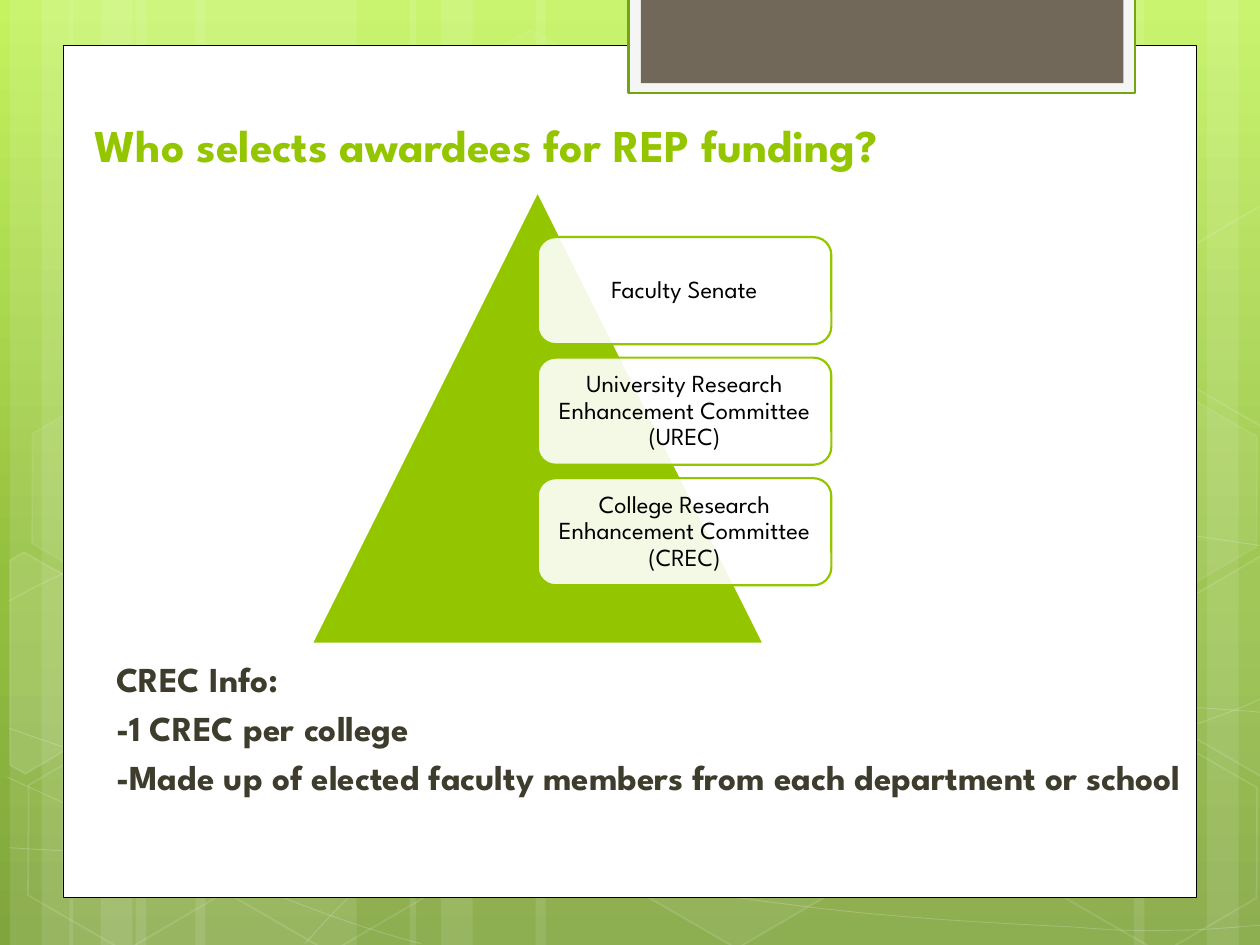
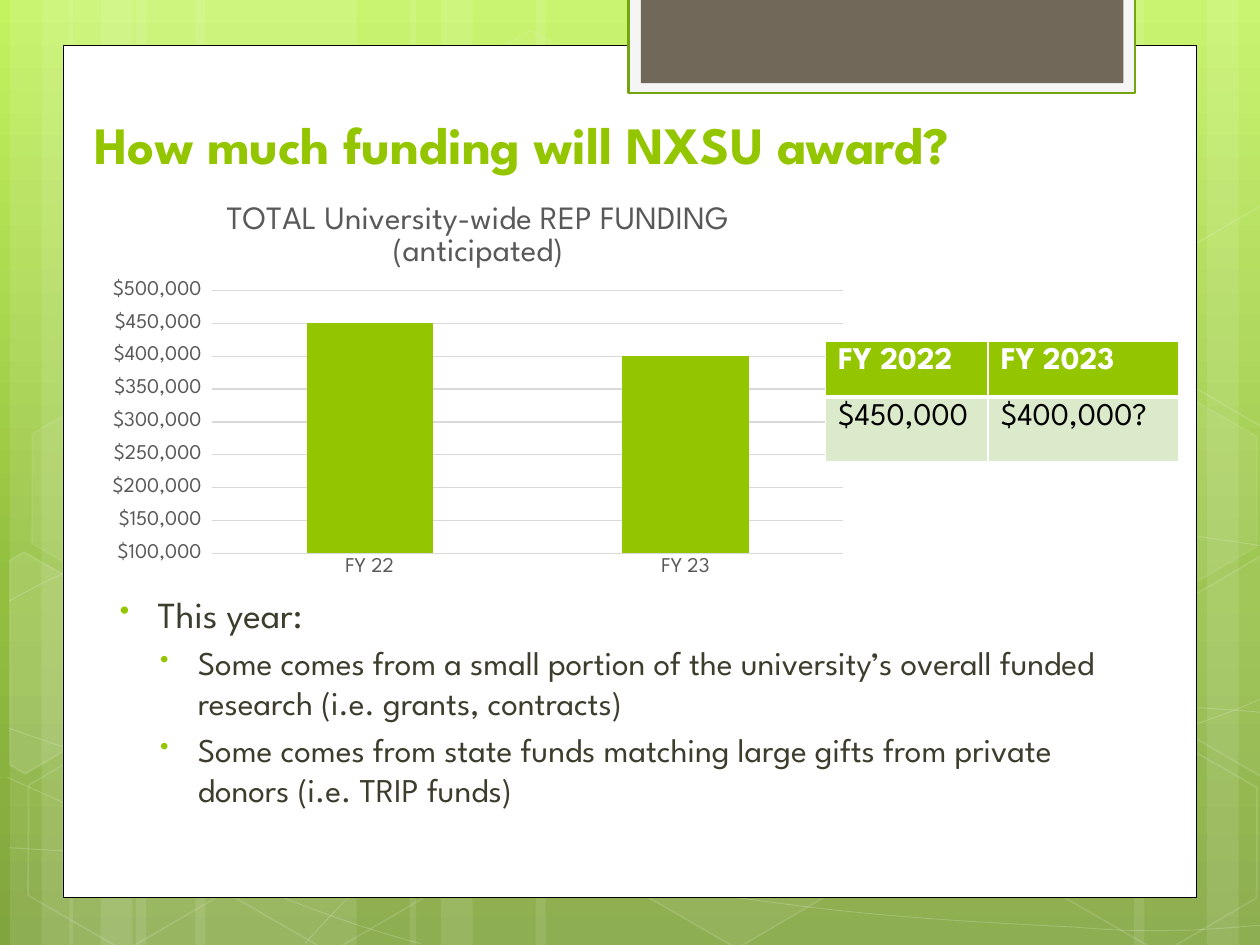
from copy import deepcopy

from lxml import etree
from pptx import Presentation
from pptx.chart.data import CategoryChartData
from pptx.dml.color import RGBColor
from pptx.enum.chart import XL_CHART_TYPE, XL_TICK_MARK
from pptx.enum.shapes import MSO_SHAPE
from pptx.enum.text import MSO_ANCHOR, MSO_AUTO_SIZE, PP_ALIGN
from pptx.oxml.ns import qn
from pptx.util import Cm, Pt

RECT = MSO_SHAPE.RECTANGLE
ROUNDED = MSO_SHAPE.ROUNDED_RECTANGLE
HEXAGON = MSO_SHAPE.HEXAGON
TRIANGLE = MSO_SHAPE.ISOSCELES_TRIANGLE
STACKED_COLUMNS = XL_CHART_TYPE.COLUMN_STACKED
NO_TICKS = XL_TICK_MARK.NONE
LEFT, CENTER = PP_ALIGN.LEFT, PP_ALIGN.CENTER
MIDDLE, BOTTOM = MSO_ANCHOR.MIDDLE, MSO_ANCHOR.BOTTOM
NO_AUTOFIT = MSO_AUTO_SIZE.NONE

FONT = "League Spartan"
GREEN = RGBColor(0x94, 0xC6, 0x00)
DARK_GREEN = RGBColor(0x74, 0xA5, 0x10)
PALE_GREEN = RGBColor(0xDC, 0xEA, 0xCC)
BROWN = RGBColor(0x71, 0x68, 0x5A)
INK = RGBColor(0x3E, 0x3D, 0x2D)
GREY = RGBColor(0x59, 0x59, 0x59)
GRID = RGBColor(0xD9, 0xD9, 0xD9)
OFF_WHITE = RGBColor(0xF5, 0xF5, 0xF5)
WHITE = RGBColor(0xFF, 0xFF, 0xFF)
BLACK = RGBColor(0x00, 0x00, 0x00)
SKY = [(0, RGBColor(0xC3, 0xF3, 0x5F)), (0.62, RGBColor(0x93, 0xBF, 0x3F)),
       (1, RGBColor(0x81, 0xA5, 0x3E))]

# Backdrop geometry in centimetres
STRIPES = [(2.74, 4.45), (0.2, 1.27), (0.84, 2.11), (3.94, 4.45), (1.4, 1.27), (2.03, 2.11),
           (18.62, 4.45), (24.33, 1.27), (22.86, 2.11), (10.8, 7.82), (8.26, 1.27), (8.89, 2.11)]
# Each wave: its start, then cubic segments (two control points and an end)
WAVES = [
    [(0.18, 17.09), (1.55, 17.17, 2.92, 17.25, 4.83, 17.22),
     (6.73, 17.2, 9.09, 17.15, 11.63, 16.89), (14.17, 16.64, 17.78, 16.15, 20.12, 15.67),
     (22.43, 15.19, 24.82, 14.43, 25.58, 14)],
    [(0.18, 12.12), (0.91, 11.71, 1.65, 11.33, 3.07, 10.95),
     (4.52, 10.57, 6.58, 10.01, 8.81, 9.83), (11.07, 9.65, 13.82, 9.63, 16.61, 9.83),
     (19.41, 10.03, 24.05, 10.82, 25.58, 11.02)],
    [(0.15, 15.67), (3.23, 17.07, 6.27, 18.47, 8.48, 19.02)],
    [(0.18, 14.68), (0.97, 14.96, 1.78, 15.24, 3.25, 15.65),
     (4.72, 16.03, 6.93, 16.66, 9.07, 17.09), (11.18, 17.53, 13.84, 17.98, 15.95, 18.24),
     (18.06, 18.52, 20.32, 18.62, 21.67, 18.69), (22.99, 18.8, 23.34, 18.75, 24, 18.75),
     (24.66, 18.72, 25.12, 18.67, 25.58, 18.64)],
    [(6.15, 19.02), (6.6, 18.52, 7.06, 18.01, 7.67, 17.55),
     (8.28, 17.09, 9.14, 16.59, 9.86, 16.23), (10.57, 15.88, 11, 15.72, 11.94, 15.47),
     (12.85, 15.21, 14.55, 14.86, 15.44, 14.68), (16.36, 14.5, 16.48, 14.5, 17.27, 14.45),
     (18.06, 14.38, 19.3, 14.3, 20.17, 14.27), (21.06, 14.25, 22.5, 14.27, 22.5, 14.27),
     (22.5, 14.27, 24.21, 14.27, 24.21, 14.27), (24.66, 14.3, 25.1, 14.33, 25.32, 14.35),
     (25.55, 14.38, 25.48, 14.35, 25.55, 14.38)],
]
# left, top, fill opacity, line opacity
HEXAGONS = [(8.48, 0.91, 4, 8), (12.62, 14.96, 6, 12), (0.28, 15.01, 0, 12),
            (0.36, 7.92, 7, 8), (4.42, 15.04, 0, 12), (19.13, 11.51, 10, 12),
            (21.18, 15.06, 0, 12), (21.18, 7.98, 7, 8)]
# fill opacity and corners of the hexagons cut off by the slide edge
CUT_HEXAGONS = [
    (10, [(0.2, 11.3), (0.48, 11.13), (2.44, 12.24), (2.41, 14.48), (0.51, 15.6), (0.2, 15.42)]),
    (4, [(23.52, 12.32), (25.43, 11.2), (25.63, 11.33), (25.63, 15.57), (25.45, 15.67),
         (23.52, 14.55)]),
    (0, [(23.52, 5.26), (25.43, 4.14), (25.65, 4.27), (25.63, 8.51), (25.45, 8.61),
         (23.52, 7.49)]),
]


def add_xml(parent, tag, **attributes):
    return etree.SubElement(parent, qn(tag), attributes)


def set_opacity(fill_parent, percent):
    if percent < 100:
        color = fill_parent.find(qn("a:solidFill"))[0]
        add_xml(color, "a:alpha", val=str(percent * 1000))


class Deck:
    def __init__(self):
        self.prs = Presentation()
        self.prs.slide_width, self.prs.slide_height = Cm(25.4), Cm(19.05)
        self.layout = self.prs.slide_layouts[5]
        self.slide = None

    # Shared look
    def background(self):
        master = self.prs.slide_master
        fill = master.background.fill
        fill.gradient()
        fill.gradient_angle = 270
        stops = master.element.xpath(".//p:bg//a:gsLst")[0]
        stops.append(deepcopy(stops[0]))
        for stop, (position, color) in zip(fill.gradient_stops, SKY):
            stop.position, stop.color.rgb = position, color

    def backdrop(self):
        """Draw the decoration, then hand it over to the layout."""
        for left, width in STRIPES:
            self.shape(RECT, left, 0, width, 19.05, WHITE, 10)
        for wave in WAVES:
            self.wave(wave)
        for left, top, opacity, line_opacity in HEXAGONS:
            hexagon = self.shape(HEXAGON, left, top, 4.45, 3.86, WHITE, opacity,
                                 WHITE, 1, line_opacity)
            hexagon.rotation = 30
            hexagon.adjustments[0] = 0.285
        for opacity, corners in CUT_HEXAGONS:
            self.outline(corners, True, opacity, 1, 12)
        self.shape(RECT, 1.27, 0.91, 22.86, 17.19, WHITE, line=BLACK, line_width=0.5)
        self.shape(RECT, 12.67, -0.05, 10.21, 1.93, OFF_WHITE, line=DARK_GREEN)
        self.shape(RECT, 12.92, -0.05, 9.73, 1.73, BROWN)

        tree = self.layout.shapes.element
        for footer in list(self.layout.placeholders)[1:]:
            tree.remove(footer.element)
        for shape in list(self.slide.shapes):
            if not shape.is_placeholder:
                tree.append(shape.element)

    def new_slide(self, title, size, top, width):
        first = self.slide is None
        self.slide = self.prs.slides.add_slide(self.layout)
        if first:
            self.background()
            self.backdrop()
        heading = self.slide.shapes.title
        heading.left, heading.top = Cm(1.65), Cm(top)
        heading.width, heading.height = Cm(width), Cm(2.16)
        frame = heading.text_frame
        frame.text = title
        frame.word_wrap, frame.auto_size = True, NO_AUTOFIT
        frame.vertical_anchor = BOTTOM
        frame.paragraphs[0].alignment = LEFT
        self.font(frame.paragraphs[0].font, size, GREEN, True)

    # Elements
    def font(self, font, size, color, bold=False):
        font.name, font.size, font.bold = FONT, Pt(size), bold
        font.color.rgb = color

    def paint(self, shape, fill, opacity, line, line_width, line_opacity):
        shape.shadow.inherit = False
        properties = shape.element.spPr
        if opacity:
            shape.fill.solid()
            shape.fill.fore_color.rgb = fill
            set_opacity(properties, opacity)
        else:
            shape.fill.background()
        if line is None:
            shape.line.fill.background()
        else:
            shape.line.color.rgb = line
            shape.line.width = Pt(line_width)
            set_opacity(properties.find(qn("a:ln")), line_opacity)
        return shape

    def shape(self, kind, left, top, width, height, fill, opacity=100,
              line=None, line_width=1.25, line_opacity=100):
        shape = self.slide.shapes.add_shape(kind, Cm(left), Cm(top), Cm(width), Cm(height))
        return self.paint(shape, fill, opacity, line, line_width, line_opacity)

    def outline(self, points, closed, opacity, line_width, line_opacity):
        start, *rest = [(Cm(x), Cm(y)) for x, y in points]
        builder = self.slide.shapes.build_freeform(*start)
        builder.add_line_segments(rest, close=closed)
        return self.paint(builder.convert_to_shape(), WHITE, opacity,
                          WHITE, line_width, line_opacity)

    def wave(self, segments):
        """Lay an outline through all points, then turn each three steps into a curve."""
        points = [segment[i:i + 2] for segment in segments for i in range(0, len(segment), 2)]
        curve = self.outline(points, False, 0, 0.5, 20)
        steps = curve.element.xpath(".//a:path/a:lnTo")
        for first, second, third in zip(steps[::3], steps[1::3], steps[2::3]):
            first.tag = qn("a:cubicBezTo")
            for step in (second, third):
                first.append(step[0])
                step.getparent().remove(step)

    def card(self, text, left, top, width, height):
        card = self.shape(ROUNDED, left, top, width, height, WHITE, 90, GREEN)
        frame = card.text_frame
        frame.text = text
        frame.word_wrap, frame.vertical_anchor = True, MIDDLE
        frame.margin_left = frame.margin_right = Cm(0.15)
        frame.margin_top = frame.margin_bottom = Cm(0.15)
        paragraph = frame.paragraphs[0]
        paragraph.alignment, paragraph.line_spacing = CENTER, 0.9
        self.font(paragraph.font, 14, BLACK)

    def body(self, left, top, width, height, lines, bold=False, bullets=False):
        """Write lines of (text, size, level)."""
        box = self.slide.shapes.add_textbox(Cm(left), Cm(top), Cm(width), Cm(height))
        frame = box.text_frame
        frame.word_wrap = True
        for number, (text, size, level) in enumerate(lines):
            paragraph = frame.add_paragraph() if number else frame.paragraphs[0]
            paragraph.text, paragraph.level = text, level
            properties = paragraph._p.get_or_add_pPr()
            if bullets:
                properties.set("marL", str(Cm(0.96 + 0.81 * level)))
                properties.set("indent", str(Cm(-0.76)))
                color = add_xml(properties, "a:buClr")
                add_xml(color, "a:srgbClr", val=str(GREEN))
                add_xml(properties, "a:buSzPct", val="76000")
                add_xml(properties, "a:buChar", char="•")
            else:
                properties.set("marL", str(Cm(0.18)))
            paragraph.space_before = Pt(0.2 * size)
            self.font(paragraph.font, size, INK, bold)

    def column_chart(self, title, categories, values, left, top, width, height):
        data = CategoryChartData()
        data.categories = categories
        data.add_series("Series 1", values)
        chart = self.slide.shapes.add_chart(
            STACKED_COLUMNS, Cm(left), Cm(top), Cm(width), Cm(height), data).chart
        self.font(chart.font, 10, BLACK)
        chart.has_legend = False
        chart.has_title = True
        chart.chart_title.include_in_layout = False
        heading = chart.chart_title.text_frame
        heading.text = title
        self.font(heading.paragraphs[0].font, 18.6, GREY)

        plot = chart.plots[0]
        plot.gap_width, plot.overlap, plot.vary_by_categories = 150, 100, False
        columns = plot.series[0].format.fill
        columns.solid()
        columns.fore_color.rgb = GREEN

        # Fix the inner plot area as shares of the chart
        area = chart.element.xpath(".//c:plotArea")[0]
        for old in area.findall(qn("c:layout")):
            area.remove(old)
        layout = add_xml(area, "c:layout")
        area.insert(0, layout)
        manual = add_xml(layout, "c:manualLayout")
        add_xml(manual, "c:layoutTarget", val="inner")
        add_xml(manual, "c:xMode", val="edge")
        add_xml(manual, "c:yMode", val="edge")
        for side, share in zip("xywh", (0.15, 0.27, 0.83, 0.65)):
            add_xml(manual, f"c:{side}", val=str(share))

        for axis in (chart.category_axis, chart.value_axis):
            axis.major_tick_mark = axis.minor_tick_mark = NO_TICKS
            axis.format.line.fill.background()
            self.font(axis.tick_labels.font, 12, GREY)
        amounts = chart.value_axis
        amounts.minimum_scale, amounts.maximum_scale = 100000, 500000
        amounts.major_unit = 50000
        amounts.major_gridlines.format.line.color.rgb = GRID
        amounts.major_gridlines.format.line.width = Pt(0.75)
        amounts.tick_labels.number_format = '"$"#,##0_);[Red]\\("$"#,##0\\)'
        amounts.tick_labels.number_format_is_linked = False

    def table(self, rows, left, top, widths, heights):
        table = self.slide.shapes.add_table(
            len(rows), len(widths), Cm(left), Cm(top), Cm(sum(widths)), Cm(sum(heights))).table
        for column, width in zip(table.columns, widths):
            column.width = Cm(width)
        for r, (texts, height) in enumerate(zip(rows, heights)):
            table.rows[r].height = Cm(height)
            header = r == 0
            for c, text in enumerate(texts):
                cell = table.cell(r, c)
                cell.text = text
                self.font(cell.text_frame.paragraphs[0].font, 18,
                          WHITE if header else BLACK, header)
                # The rule between header and values is thicker
                thick = "B" if header else "T"
                properties = cell._tc.get_or_add_tcPr()
                for side in "LRTB":
                    border = add_xml(properties, f"a:ln{side}",
                                     w=str(Pt(3 if side == thick else 1)))
                    add_xml(add_xml(border, "a:solidFill"), "a:srgbClr", val=str(WHITE))
                cell.fill.solid()
                cell.fill.fore_color.rgb = GREEN if header else PALE_GREEN


def main():
    deck = Deck()

    # Who selects awardees
    deck.new_slide("Who selects awardees for REP funding?", 26, 1.42, 22.58)
    deck.body(1.91, 13.13, 22.58, 5.89, [
        ("CREC Info:", 20, 0),
        ("-1 CREC per college", 20, 0),
        ("-Made up of elected faculty members from each department or school", 20, 0),
    ], bold=True)
    deck.shape(TRIANGLE, 6.28, 3.86, 9.12, 9.12, GREEN, line=WHITE)
    committees = ["Faculty Senate", "University Research Enhancement Committee (UREC)",
                  "College Research Enhancement Committee (CREC)"]
    for rank, committee in enumerate(committees):
        deck.card(committee, 10.84, 4.78 + 2.43 * rank, 5.92, 2.16)

    # How much funding
    deck.new_slide("How much funding will NXSU award?", 30, 1.5, 20.73)
    deck.body(1.97, 11.81, 21.41, 9.75, [
        ("This year:", 21, 0),
        ("Some comes from a small portion of the university’s overall funded research "
         "(i.e. grants, contracts)", 19, 1),
        ("Some comes from state funds matching large gifts from private donors "
         "(i.e. TRIP funds)", 19, 1),
    ], bullets=True)
    deck.column_chart("TOTAL University-wide REP FUNDING (anticipated)",
                      ["FY 22", "FY 23"], [450000, 400000], 1.97, 3.66, 15.34, 8.15)
    deck.table([["FY 2022", "FY 2023"], ["$450,000", "$400,000?"]],
               16.64, 6.88, [3.28, 3.85], [1.12, 1.3])

    deck.prs.save("out.pptx")


if __name__ == "__main__":
    main()
